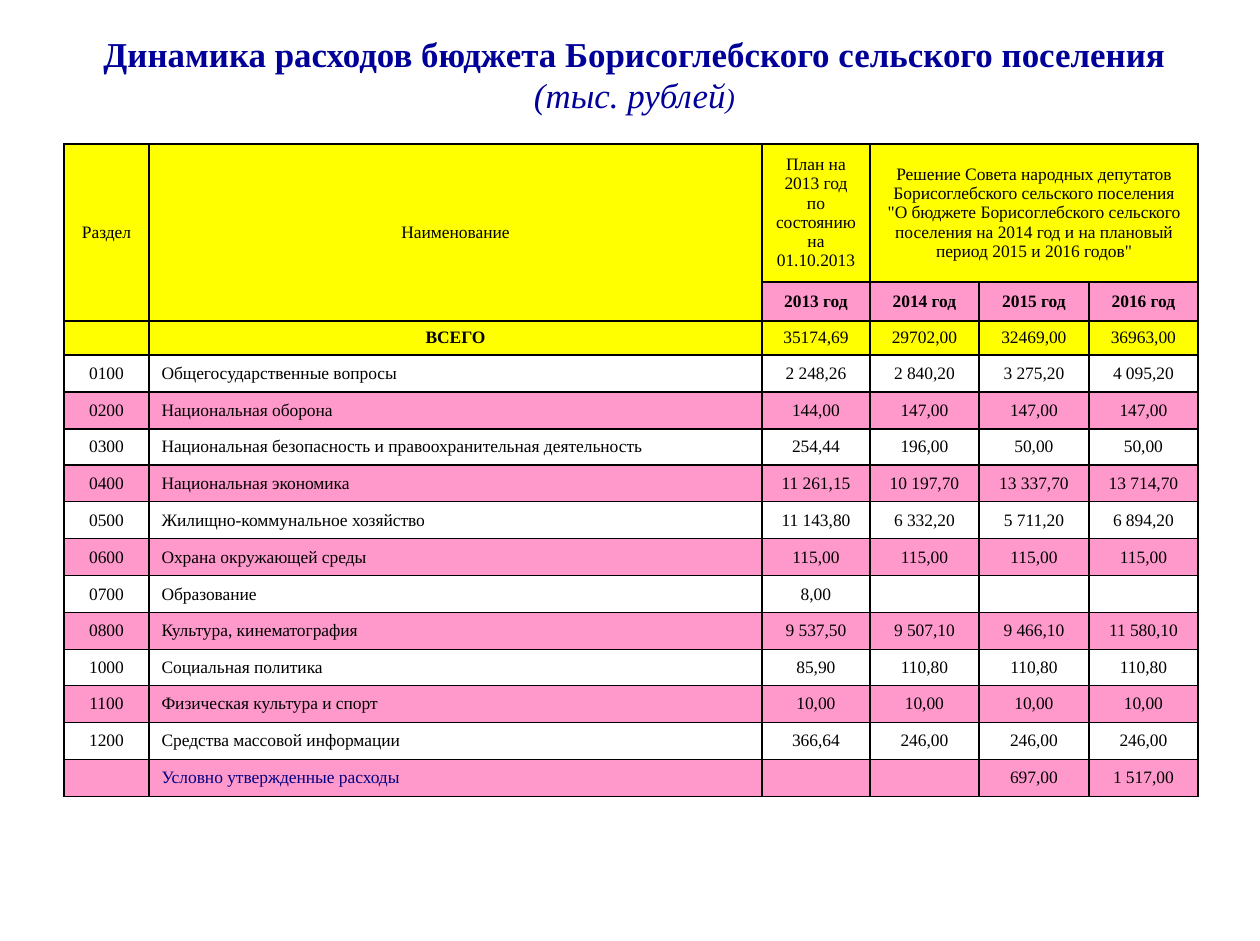
"""Builds a slide with a table of the settlement's budget expenses for 2013-2016."""
import lxml.etree
import pptx
import pptx.dml.color
import pptx.enum.text
import pptx.oxml.ns
import pptx.util

EMU_PER_PX = 914400 / 125.5
FONT = "Times New Roman"
YELLOW, PINK, WHITE = "FFFF00", "FF99CC", "FFFFFF"
BLACK, BLUE, NAVY = "000000", "000099", "000080"
ALIGN = pptx.enum.text.PP_ALIGN
ANCHOR = pptx.enum.text.MSO_ANCHOR


def px(length):
    return pptx.util.Emu(round(length * EMU_PER_PX))


def add_run(paragraph, text, color, **formats):
    run = paragraph.add_run()
    run.text = text
    run.font.color.rgb = pptx.dml.color.RGBColor.from_string(color)
    for name, value in {"name": FONT, **formats}.items():
        setattr(run.font, name, value)


presentation = pptx.Presentation()
presentation.slide_width = px(1260)
presentation.slide_height = px(941)
slide = presentation.slides.add_slide(presentation.slide_layouts[5])

title = slide.shapes.title
title_place = {"left": 64, "top": 26, "width": 1141, "height": 129}
for name, length in title_place.items():
    setattr(title, name, px(length))
title_frame = title.text_frame
title_format = {
    "word_wrap": True,
    "auto_size": pptx.enum.text.MSO_AUTO_SIZE.NONE,
    "vertical_anchor": ANCHOR.TOP,
}
for name, value in title_format.items():
    setattr(title_frame, name, value)
heading = title_frame.paragraphs[0]
heading.alignment = ALIGN.CENTER
for text, size, bold, italic in [
    ("Динамика расходов бюджета Борисоглебского сельского поселения ", 20, True, False),
    ("(тыс. рублей", 20, False, True),
    (")", 16, False, True),
]:
    add_run(heading, text, BLUE, size=pptx.util.Pt(size), bold=bold, italic=italic)

rows = [
    ["Раздел", "Наименование", "План на 2013 год по состоянию на 01.10.2013",
     "Решение Совета народных депутатов Борисоглебского сельского поселения "
     "\"О бюджете Борисоглебского сельского поселения на 2014 год "
     "и на плановый период 2015 и 2016 годов\"", "", ""],
    ["", "", "2013 год", "2014 год", "2015 год", "2016 год"],
    ["", "ВСЕГО", "35174,69", "29702,00", "32469,00", "36963,00"],
    ["0100", "Общегосударственные вопросы", "2 248,26", "2 840,20", "3 275,20", "4 095,20"],
    ["0200", "Национальная оборона", "144,00", "147,00", "147,00", "147,00"],
    ["0300", "Национальная безопасность и правоохранительная деятельность",
     "254,44", "196,00", "50,00", "50,00"],
    ["0400", "Национальная экономика", "11 261,15", "10 197,70", "13 337,70", "13 714,70"],
    ["0500", "Жилищно-коммунальное хозяйство", "11 143,80", "6 332,20", "5 711,20", "6 894,20"],
    ["0600", "Охрана окружающей среды", "115,00", "115,00", "115,00", "115,00"],
    ["0700", "Образование", "8,00", "", "", ""],
    ["0800", "Культура, кинематография", "9 537,50", "9 507,10", "9 466,10", "11 580,10"],
    ["1000", "Социальная политика", "85,90", "110,80", "110,80", "110,80"],
    ["1100", "Физическая культура и спорт", "10,00", "10,00", "10,00", "10,00"],
    ["1200", "Средства массовой информации", "366,64", "246,00", "246,00", "246,00"],
    ["", "Условно утвержденные расходы", "", "", "697,00", "1 517,00"],
]
column_widths = [85, 613, 108, 109, 110, 109]
row_heights = [138, 39, 34] + [37, 37, 36, 37, 37, 37] * 2

table = slide.shapes.add_table(
    len(rows), len(column_widths), px(64), px(144),
    px(sum(column_widths)), px(sum(row_heights)),
).table
table.first_row = False
table.horz_banding = False
for column, width in zip(table.columns, column_widths):
    column.width = px(width)
for row, height in zip(table.rows, row_heights):
    row.height = px(height)

for row_index, texts in enumerate(rows):
    for column_index, text in enumerate(texts):
        cell = table.cell(row_index, column_index)
        cell.vertical_anchor = ANCHOR.MIDDLE
        cell_properties = cell._tc.get_or_add_tcPr()
        for side in ("lnL", "lnR", "lnT", "lnB"):
            border = lxml.etree.SubElement(
                cell_properties, pptx.oxml.ns.qn(f"a:{side}"), w=str(pptx.util.Pt(1)))
            line_fill = lxml.etree.SubElement(border, pptx.oxml.ns.qn("a:solidFill"))
            lxml.etree.SubElement(line_fill, pptx.oxml.ns.qn("a:srgbClr"), val=BLACK)

        if row_index in (0, 2) or (row_index == 1 and column_index < 2):
            fill_color = YELLOW
        else:
            fill_color = WHITE if row_index > 2 and row_index % 2 else PINK
        cell.fill.solid()
        cell.fill.fore_color.rgb = pptx.dml.color.RGBColor.from_string(fill_color)

        paragraph = cell.text_frame.paragraphs[0]
        is_section_name = row_index > 2 and column_index == 1
        paragraph.alignment = ALIGN.JUSTIFY if is_section_name else ALIGN.CENTER
        if text:
            is_last_name = is_section_name and row_index == len(rows) - 1
            add_run(paragraph, text, NAVY if is_last_name else BLACK,
                    size=pptx.util.Pt(10), bold=row_index == 1 or text == "ВСЕГО")
        else:
            lxml.etree.SubElement(paragraph._p, pptx.oxml.ns.qn("a:endParaRPr"), sz="1000")

for first, last in [((0, 0), (1, 0)), ((0, 1), (1, 1)), ((0, 3), (0, 5))]:
    table.cell(*first).merge(table.cell(*last))

presentation.save("out.pptx")
